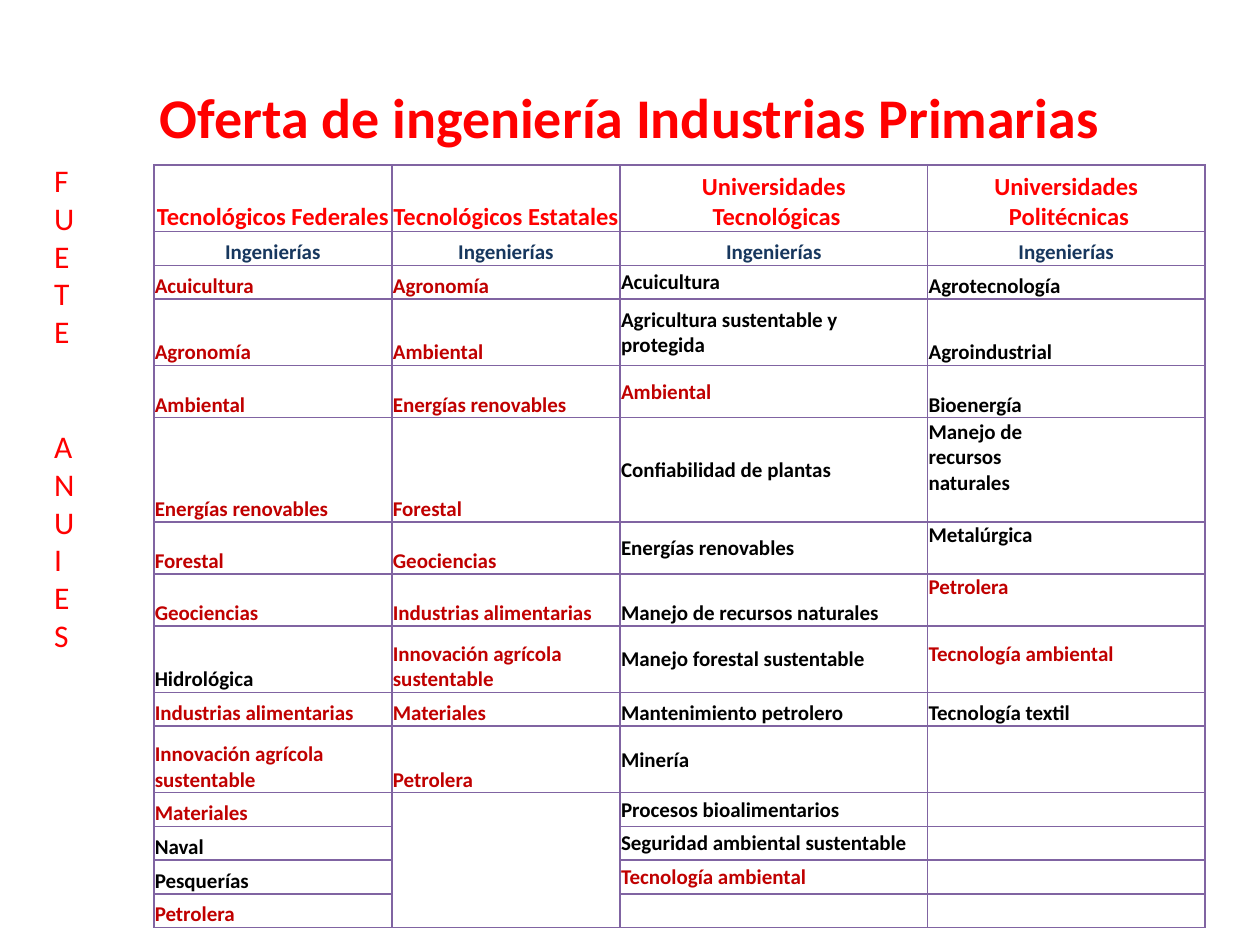
from dataclasses import dataclass

from lxml.etree import SubElement
from pptx import Presentation
from pptx.dml.color import RGBColor
from pptx.enum.text import MSO_ANCHOR as Anchor, PP_ALIGN as Align
from pptx.oxml.ns import qn
from pptx.util import Cm, Pt

COLORS = {
    "heading": "FF0000",
    "subheading": "17375E",
    "shared": "C00000",
    "own": "000000",
    "border": "8064A2",
}
FONT = "Calibri"
LOW, MID = Anchor.BOTTOM, Anchor.MIDDLE
TALL, SHORT, MEDIUM, LARGE = 1.34, 0.68, 1.05, 2.1
ROW_HEIGHTS = [TALL, SHORT, SHORT, TALL, MEDIUM, LARGE, MEDIUM, MEDIUM,
               TALL, SHORT, TALL, SHORT, SHORT, SHORT, SHORT]
LINE = 0.52  # height of one line of programme text, in cm


@dataclass
class Entry:
    text: str
    color: str = "own"
    anchor: Anchor = LOW
    lift: float = 0
    size: int = 12
    align: Align = Align.LEFT


@dataclass
class Column:
    heading: str
    width: float
    programmes: list[Entry]

    def entries(self) -> list[Entry]:
        """Heading, subheading and programmes, filled up to the last row."""
        top = [Entry(self.heading, "heading", size=14, align=Align.CENTER),
               Entry("Ingenierías", "subheading", align=Align.CENTER)]
        filled = top + self.programmes
        return filled + [Entry("")] * (len(ROW_HEIGHTS) - len(filled))


def shared(text: str, anchor: Anchor = LOW, lift: float = 0) -> Entry:
    """A programme that several kinds of institution offer."""
    return Entry(text, "shared", anchor, lift)


COLUMNS = [
    Column("Tecnológicos Federales", 4.8, [
        shared("Acuicultura"),
        shared("Agronomía"),
        shared("Ambiental"),
        shared("Energías renovables"),
        shared("Forestal"),
        shared("Geociencias"),
        Entry("Hidrológica"),
        shared("Industrias alimentarias"),
        shared("Innovación agrícola sustentable"),
        shared("Materiales"),
        Entry("Naval"),
        Entry("Pesquerías"),
        shared("Petrolera"),
    ]),
    Column("Tecnológicos Estatales", 4.6, [
        shared("Agronomía"),
        shared("Ambiental"),
        shared("Energías renovables"),
        shared("Forestal"),
        shared("Geociencias"),
        shared("Industrias alimentarias"),
        shared("Innovación agrícola sustentable"),
        shared("Materiales"),
        shared("Petrolera"),
    ]),
    Column("Universidades\n Tecnológicas", 6.2, [
        Entry("Acuicultura", anchor=MID),
        Entry("Agricultura sustentable y protegida", anchor=MID),
        shared("Ambiental", MID),
        Entry("Confiabilidad de plantas", anchor=MID),
        Entry("Energías renovables", anchor=MID),
        Entry("Manejo de recursos naturales"),
        Entry("Manejo forestal sustentable", anchor=MID),
        Entry("Mantenimiento petrolero"),
        Entry("Minería", anchor=MID),
        Entry("Procesos bioalimentarios", anchor=MID),
        Entry("Seguridad ambiental sustentable", anchor=MID),
        shared("Tecnología ambiental", MID),
    ]),
    Column("Universidades\n Politécnicas", 5.59, [
        Entry("Agrotecnología"),
        Entry("Agroindustrial"),
        Entry("Bioenergía"),
        Entry("Manejo de\nrecursos\nnaturales", lift=LINE),
        Entry("Metalúrgica", lift=LINE),
        shared("Petrolera", lift=LINE),
        shared("Tecnología ambiental", lift=LINE),
        Entry("Tecnología textil"),
    ]),
]


def style(paragraph, size: int, color: str, bold: bool, align: Align) -> None:
    paragraph.alignment = align
    font = paragraph.font
    font.name, font.size, font.bold = FONT, Pt(size), bold
    font.color.rgb = RGBColor.from_string(COLORS[color])


def add_borders(cell) -> None:
    properties = cell._tc.get_or_add_tcPr()
    for position, side in enumerate(("lnL", "lnR", "lnT", "lnB")):
        line = properties.makeelement(qn(f"a:{side}"), {"w": str(Pt(1))})
        fill = SubElement(line, qn("a:solidFill"))
        SubElement(fill, qn("a:srgbClr"), val=COLORS["border"])
        properties.insert(position, line)


def fill_cell(cell, entry: Entry) -> None:
    cell.fill.background()
    add_borders(cell)
    cell.margin_left = cell.margin_right = cell.margin_top = Cm(0.02)
    cell.margin_bottom = Cm(entry.lift)
    cell.vertical_anchor = entry.anchor
    cell.text_frame.text = entry.text
    for paragraph in cell.text_frame.paragraphs:
        style(paragraph, entry.size, entry.color, True, entry.align)
        if not entry.text:  # keeps empty rows from growing
            SubElement(paragraph._p, qn("a:endParaRPr"), sz=str(entry.size * 100))


def add_title(slide) -> None:
    frame = slide.shapes.add_textbox(Cm(1.27), Cm(0.76), Cm(22.86), Cm(3.18)).text_frame
    frame.word_wrap = True
    frame.vertical_anchor = MID
    frame.text = "Oferta de ingeniería Industrias Primarias"
    style(frame.paragraphs[0], 32, "heading", True, Align.CENTER)


def add_programme_table(slide) -> None:
    table = slide.shapes.add_table(
        len(ROW_HEIGHTS), len(COLUMNS), Cm(3.1), Cm(3.33),
        Cm(sum(column.width for column in COLUMNS)), Cm(sum(ROW_HEIGHTS))).table
    table.first_row = table.horz_banding = False
    for row, height in zip(table.rows, ROW_HEIGHTS):
        row.height = Cm(height)
    for column_index, column in enumerate(COLUMNS):
        table.columns[column_index].width = Cm(column.width)
        for row_index, entry in enumerate(column.entries()):
            fill_cell(table.cell(row_index, column_index), entry)
    table.cell(11, 1).merge(table.cell(14, 1))


def add_source_label(slide) -> None:
    """Source of the data, written downwards one letter a line."""
    words = ("FUETE", "ANUIES")
    frame = slide.shapes.add_textbox(Cm(0.84), Cm(3.12), Cm(0.91), Cm(11.02)).text_frame
    frame.word_wrap = False
    frame.text = "\n".join("".join(words))
    for paragraph in frame.paragraphs:
        style(paragraph, 18, "heading", False, Align.LEFT)
    frame.paragraphs[len(words[0])].space_before = Pt(44)


def main() -> None:
    deck = Presentation()
    deck.slide_width, deck.slide_height = Cm(25.4), Cm(19.05)
    slide = deck.slides.add_slide(deck.slide_layouts[6])
    add_title(slide)
    add_programme_table(slide)
    add_source_label(slide)
    deck.save("out.pptx")


if __name__ == "__main__":
    main()
